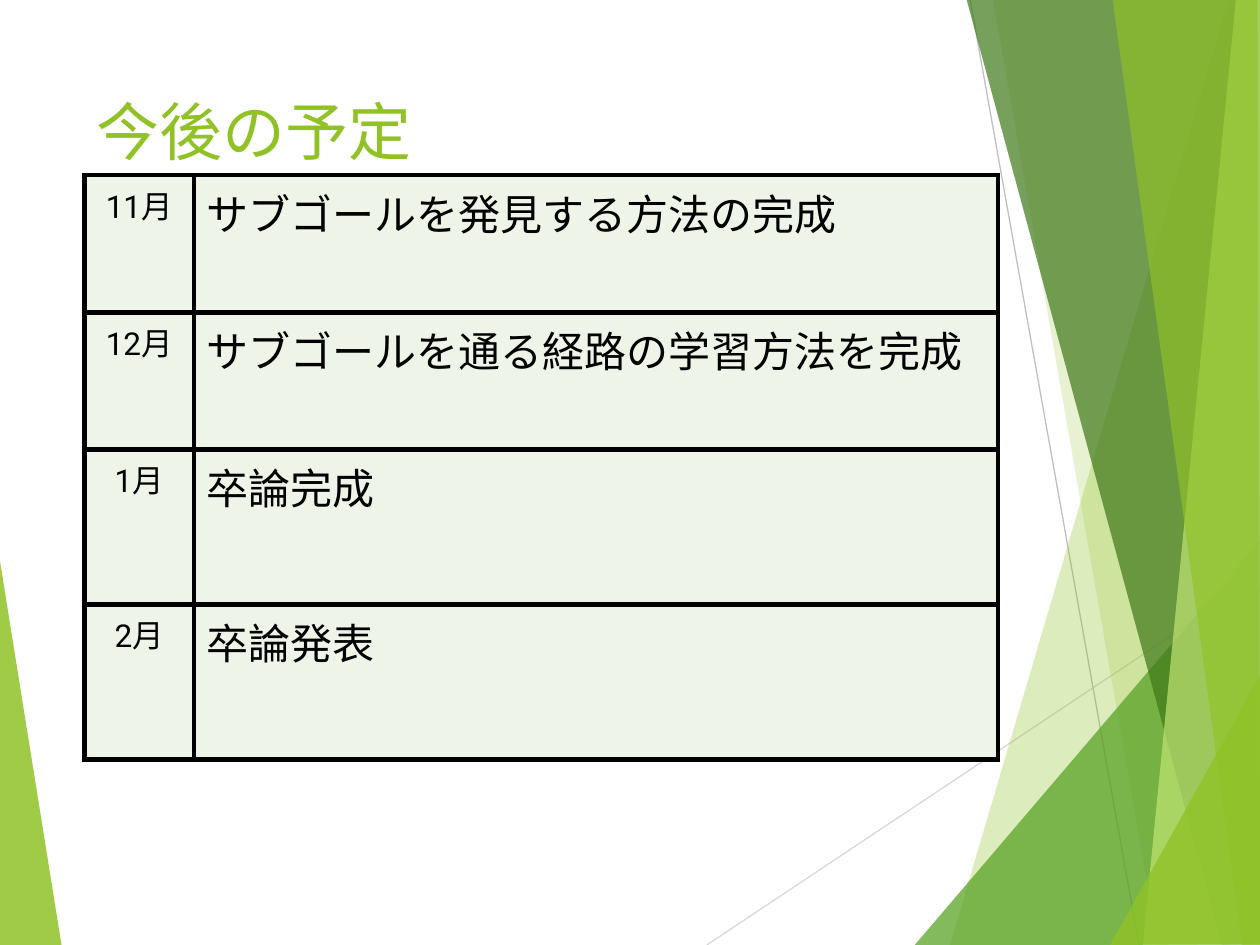
from lxml.etree import SubElement
from pptx import Presentation
from pptx.dml.color import RGBColor
from pptx.enum.shapes import MSO_CONNECTOR as Connector
from pptx.enum.text import MSO_ANCHOR as Anchor, PP_ALIGN as Align
from pptx.oxml import parse_xml
from pptx.oxml.ns import nsdecls, qn
from pptx.util import Inches, Pt

LIME = RGBColor(0x90, 0xC2, 0x26)
GREEN = RGBColor(0x54, 0xA0, 0x21)
FOREST = RGBColor(0x3F, 0x78, 0x19)
PALE_LIME = RGBColor(0xC0, 0xE4, 0x74)
LIGHT_GREY = RGBColor(0xD9, 0xD9, 0xD9)
GREY = RGBColor(0xBF, 0xBF, 0xBF)
CELL_FILL = RGBColor(0xEE, 0xF4, 0xE8)
BLACK = RGBColor(0, 0, 0)

LEFT_FACET = ([(-0.01, 4.39), (0.49, 7.51), (-0.01, 7.5)], LIME, 85)
RAYS = [
    ((5.61, 7.5), (10.01, 4.57), LIGHT_GREY),
    ((7.7, 0), (9.04, 7.5), GREY),
]
RIGHT_FACETS = [
    ([(9.75, 0), (7.54, 7.5), (10.02, 7.51), (10.01, 0.01)], LIME, 30),
    ([(7.88, -0.01), (9.19, 7.5), (10.01, 7.5), (10.01, -0.01)], LIME, 20),
    ([(7.26, 7.5), (10, 4.29), (10.01, 7.5)], GREEN, 72),
    ([(7.67, -0.01), (9.7, 7.5), (10.01, 7.49), (10.01, -0.01)], FOREST, 70),
    ([(9.81, -0.01), (9.07, 7.5), (10.01, 7.5), (10, -0.01)], PALE_LIME, 70),
    ([(8.83, -0.01), (9.86, 7.5), (10, 7.5), (9.98, -0.01)], LIME, 65),
    ([(8.81, 7.5), (10.01, 5.35), (10.01, 7.49)], LIME, 80),
]
SCHEDULE = [
    ("11月", "サブゴールを発見する方法の完成"),
    ("12月", "サブゴールを通る経路の学習方法を完成"),
    ("1月", "卒論完成"),
    ("2月", "卒論発表"),
]


class SlideBuilder:
    """Draws the elements of one slide in a shared style."""

    font_name = "Roboto"

    def __init__(self, slide):
        self.slide = slide

    def style(self, paragraph, size, color, align=Align.LEFT):
        paragraph.alignment = align
        paragraph.font.name = self.font_name
        paragraph.font.size = Pt(size)
        paragraph.font.color.rgb = color

    def facet(self, points, color, opacity):
        start, *others = [(Inches(x), Inches(y)) for x, y in points]
        builder = self.slide.shapes.build_freeform(*start)
        builder.add_line_segments(others, close=True)
        shape = builder.convert_to_shape()
        shape.shadow.inherit = False
        shape.line.fill.background()
        shape.fill.solid()
        shape.fill.fore_color.rgb = color
        fill_color = shape.element.spPr.find(f"{qn('a:solidFill')}/{qn('a:srgbClr')}")
        SubElement(fill_color, qn("a:alpha"), val=str(opacity * 1000))

    def ray(self, start, end, color):
        ends = [Inches(value) for value in (*start, *end)]
        connector = self.slide.shapes.add_connector(Connector.STRAIGHT, *ends)
        connector.line.color.rgb = color
        connector.line.width = Pt(0.75)
        SubElement(connector.element.spPr, qn("a:effectLst"))

    def title(self, text, left, top, width, height):
        box = self.slide.shapes.add_textbox(
            Inches(left), Inches(top), Inches(width), Inches(height))
        frame = box.text_frame
        frame.word_wrap = True
        frame.vertical_anchor = Anchor.MIDDLE
        frame.text = text
        self.style(frame.paragraphs[0], 36, LIME)

    def table(self, rows, left, top, widths, heights):
        table = self.slide.shapes.add_table(
            len(rows), len(widths), Inches(left), Inches(top),
            Inches(sum(widths)), Inches(sum(heights))).table
        for column, width in zip(table.columns, widths):
            column.width = Inches(width)
        for row, height, (month, plan) in zip(table.rows, heights, rows):
            row.height = Inches(height)
            self.cell(row.cells[0], month, 18, Align.CENTER)
            self.cell(row.cells[1], plan, 24, Align.LEFT)

    def cell(self, cell, text, size, align):
        cell.text = text
        self.style(cell.text_frame.paragraphs[0], size, BLACK, align)
        cell.fill.solid()
        cell.fill.fore_color.rgb = CELL_FILL
        properties = cell._tc.get_or_add_tcPr()
        for index, side in enumerate("LRTB"):
            properties.insert(index, parse_xml(
                f'<a:ln{side} {nsdecls("a")} w="{Pt(3)}"><a:solidFill>'
                f'<a:srgbClr val="{BLACK}"/></a:solidFill></a:ln{side}>'))


def main():
    presentation = Presentation()
    presentation.slide_width = Inches(10)
    presentation.slide_height = Inches(7.5)
    slide = presentation.slides.add_slide(presentation.slide_layouts[6])
    builder = SlideBuilder(slide)
    builder.facet(*LEFT_FACET)
    for ray in RAYS:
        builder.ray(*ray)
    for facet in RIGHT_FACETS:
        builder.facet(*facet)
    builder.title("今後の予定", 0.67, 0.67, 6.94, 0.72)
    builder.table(SCHEDULE, 0.67, 1.39, [0.87, 6.38], [1.09, 1.09, 1.23, 1.23])
    presentation.save("out.pptx")


if __name__ == "__main__":
    main()
